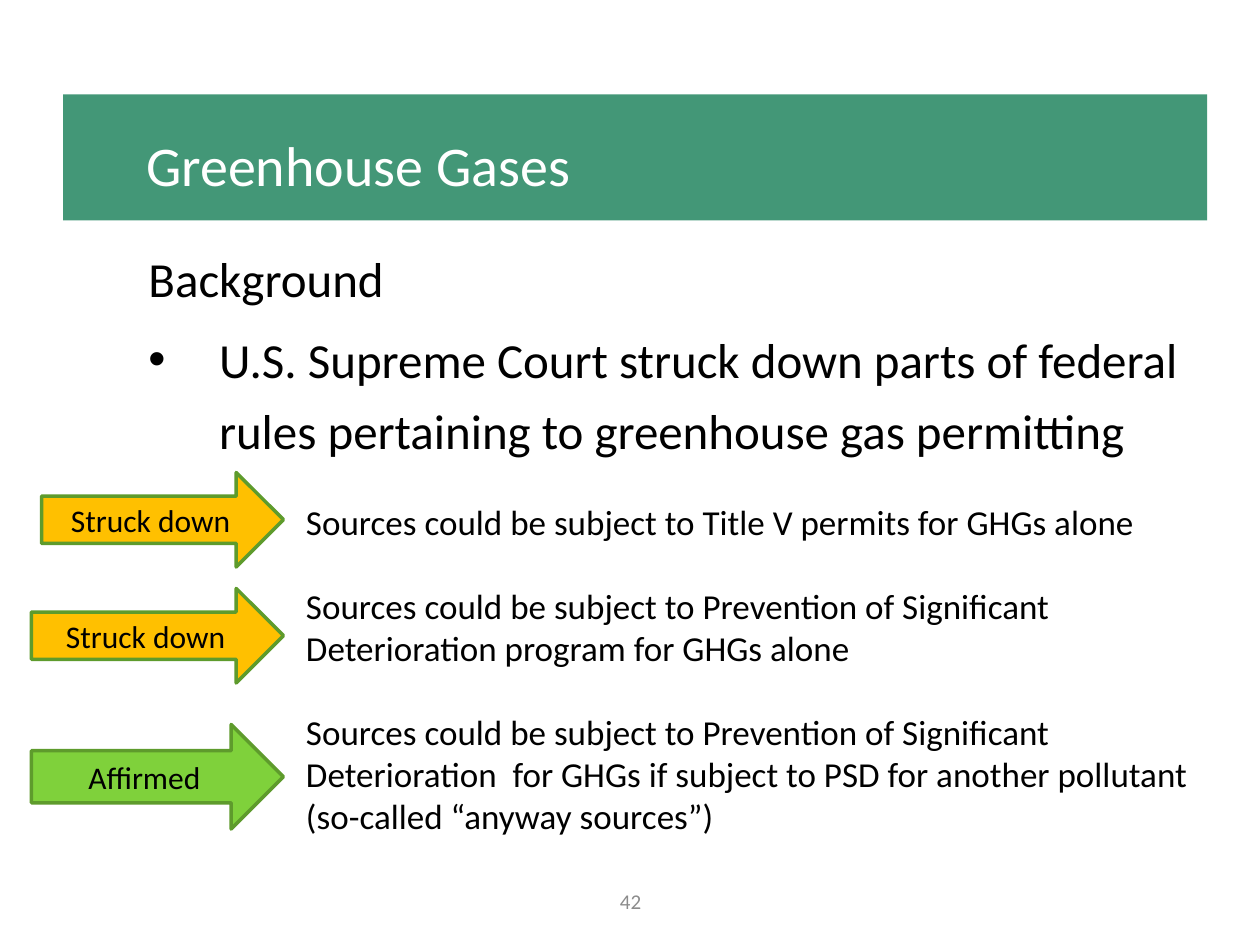
from lxml import etree
from pptx import Presentation
from pptx.dml.color import RGBColor
from pptx.enum.shapes import MSO_SHAPE as Preset
from pptx.enum.text import MSO_ANCHOR as Anchor, MSO_AUTO_SIZE as AutoSize, PP_ALIGN as Align
from pptx.oxml.ns import qn
from pptx.util import Inches, Pt

COLORS = {
    "banner": "439777",
    "struck": "FFC000",
    "affirmed": "7FD13B",
    "outline": "5E9B2C",
    "text": "000000",
    "white": "FFFFFF",
    "number": "8C8C8C",
}


def write(shape, lines, size, color="text", align=Align.LEFT, anchor=Anchor.TOP,
          line_spacing=None, space_after=0):
    frame = shape.text_frame
    frame.word_wrap = True
    frame.vertical_anchor = anchor
    frame.text = "\n".join(lines)
    for para in frame.paragraphs:
        para.alignment = align
        para.line_spacing = line_spacing
        para.space_after = Pt(space_after)
        para.font.name = "Calibri"
        para.font.size = Pt(size)
        para.font.color.rgb = RGBColor.from_string(COLORS[color])
    return frame


def add_filled(page, preset, left, top, width, height, fill):
    shape = page.shapes.add_shape(preset, Inches(left), Inches(top), Inches(width), Inches(height))
    shape.shadow.inherit = False
    shape.fill.solid()
    shape.fill.fore_color.rgb = RGBColor.from_string(COLORS[fill])
    return shape


deck = Presentation()
deck.slide_width, deck.slide_height = Inches(10), Inches(7.5)
page = deck.slides.add_slide(deck.slide_layouts[6])

background = page.shapes.add_textbox(Inches(0.58), Inches(1.83), Inches(9.08), Inches(2))
frame = write(background, [
    "Background",
    "U.S. Supreme Court struck down parts of federal rules pertaining to greenhouse gas permitting",
], 28, line_spacing=1.2, space_after=6)
for para, bullet in zip(frame.paragraphs, (None, "•")):
    props = para._p.get_or_add_pPr()
    props.set("marL", str(Inches(1.06)))
    props.set("indent", str(Inches(-0.56)))
    if bullet:
        font = etree.Element(qn("a:buFont"), typeface="Arial")
        mark = etree.Element(qn("a:buChar"), char=bullet)
        position = props.index(props.find(qn("a:defRPr")))
        props[position:position] = [font, mark]

number = page.shapes.add_textbox(Inches(3.42), Inches(6.95), Inches(3.17), Inches(0.4))
write(number, ["42"], 12, "number", Align.CENTER, Anchor.MIDDLE)

banner = add_filled(page, Preset.RECTANGLE, 0.5, 0.75, 9.08, 1, "banner")
banner.line.fill.background()
frame = write(banner, ["Greenhouse Gases"], 32, "white", anchor=Anchor.MIDDLE,
              line_spacing=1.2, space_after=6)
frame.margin_left = Inches(0.66)

rulings = page.shapes.add_textbox(Inches(2.33), Inches(3.92), Inches(7.42), Inches(2.79))
frame = write(rulings, [
    "Sources could be subject to Title V permits for GHGs alone",
    "Sources could be subject to Prevention of Significant Deterioration program for GHGs alone",
    "Sources could be subject to Prevention of Significant Deterioration  for GHGs if subject to PSD "
    "for another pollutant (so-called “anyway sources”)",
], 20, space_after=24)
frame.auto_size = AutoSize.SHAPE_TO_FIT_TEXT

ARROWS_RIGHT = 2.25
for label, fill, left, top, height in (
    ("Struck down", "struck", 0.33, 3.75, 0.75),
    ("Struck down", "struck", 0.25, 4.67, 0.75),
    ("Affirmed", "affirmed", 0.25, 5.75, 0.83),
):
    arrow = add_filled(page, Preset.RIGHT_ARROW, left, top, ARROWS_RIGHT - left, height, fill)
    arrow.line.color.rgb = RGBColor.from_string(COLORS["outline"])
    arrow.line.width = Pt(2)
    write(arrow, [label], 18, align=Align.CENTER, anchor=Anchor.MIDDLE)

deck.save("out.pptx")
